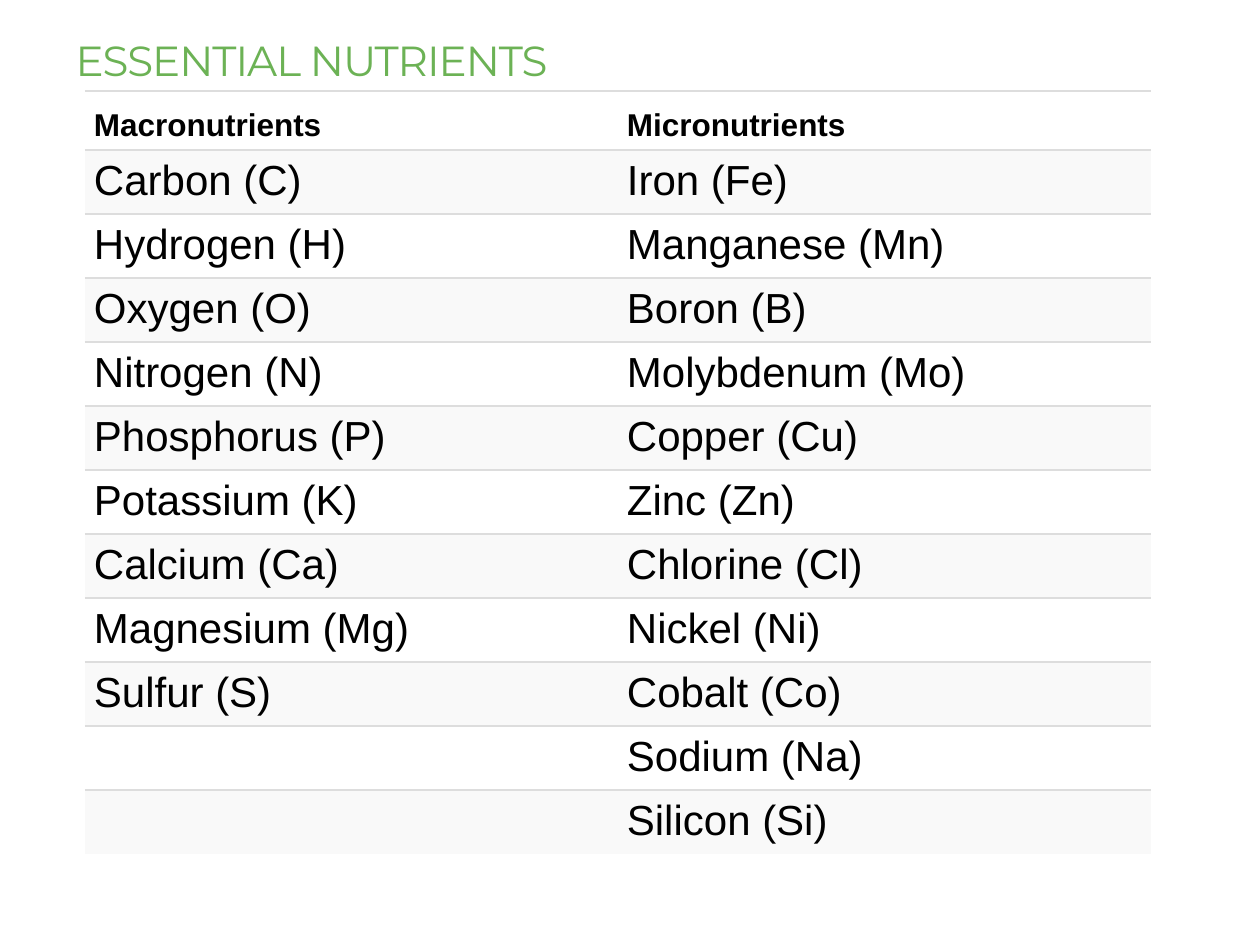
from typing import NamedTuple

from lxml.etree import SubElement
from pptx import Presentation
from pptx.dml.color import RGBColor
from pptx.enum.text import MSO_ANCHOR, MSO_AUTO_SIZE, PP_ALIGN
from pptx.oxml.ns import qn
from pptx.util import Emu, Pt

PX = 914400 // 126
HEADER_H, ROW_H = 59, 64
STRIPE, RULE = "F9F9F9", "DDDDDD"


class Style(NamedTuple):
    font: str
    size: int
    color: str
    bold: bool = False


class Nutrients(NamedTuple):
    macro: str
    micro: str


TITLE = Style("Montserrat", 24, "6CB255")
HEADER = Style("Arial", 18, "000000", True)
BODY = Style("Arial", 24, "000000")

ROWS = [
    Nutrients("Macronutrients", "Micronutrients"),
    Nutrients("Carbon (C)", "Iron (Fe)"),
    Nutrients("Hydrogen (H)", "Manganese (Mn)"),
    Nutrients("Oxygen (O)", "Boron (B)"),
    Nutrients("Nitrogen (N)", "Molybdenum (Mo)"),
    Nutrients("Phosphorus (P)", "Copper (Cu)"),
    Nutrients("Potassium (K)", "Zinc (Zn)"),
    Nutrients("Calcium (Ca)", "Chlorine (Cl)"),
    Nutrients("Magnesium (Mg)", "Nickel (Ni)"),
    Nutrients("Sulfur (S)", "Cobalt (Co)"),
    Nutrients("", "Sodium (Na)"),
    Nutrients("", "Silicon (Si)"),
]


def px(n: int) -> Emu:
    """Turn pixels into EMU."""
    return Emu(n * PX)


def rgb(color: str) -> RGBColor:
    """Turn a hex string into a colour."""
    return RGBColor.from_string(color)


def set_attrs(obj, values: dict) -> None:
    """Set each named attribute on an object."""
    for name, value in values.items():
        setattr(obj, name, value)


def write(tf, text: str, style: Style):
    """Write one styled run into a text frame and return it."""
    r = tf.paragraphs[0].add_run()
    r.text = text
    set_attrs(r.font, {"name": style.font, "size": Pt(style.size), "bold": style.bold})
    r.font.color.rgb = rgb(style.color)
    return r


def set_borders(cell, ruled: str) -> None:
    """Rule the named sides of a cell and clear the others."""
    tcPr = cell._tc.get_or_add_tcPr()
    for side in "LRTB":
        ln = SubElement(tcPr, qn(f"a:ln{side}"), w=str(Pt(1)))
        if side in ruled:
            fill = SubElement(ln, qn("a:solidFill"))
            SubElement(fill, qn("a:srgbClr"), val=RULE)
        else:
            SubElement(ln, qn("a:noFill"))


def draw_title(s, text: str) -> None:
    """Place and fill the title placeholder."""
    sp = s.shapes.title
    set_attrs(sp, {"left": px(63), "top": px(0), "width": px(1111), "height": px(91)})
    tf = sp.text_frame
    set_attrs(tf, {"vertical_anchor": MSO_ANCHOR.BOTTOM, "word_wrap": True,
                   "auto_size": MSO_AUTO_SIZE.NONE})
    tf.paragraphs[0].alignment = PP_ALIGN.LEFT
    write(tf, text, TITLE)._r.get_or_add_rPr().set("spc", "-60")


def draw_table(s, rows: list[Nutrients]) -> None:
    """Draw the striped nutrient table."""
    height = HEADER_H + ROW_H * (len(rows) - 1)
    table = s.shapes.add_table(len(rows), 2, px(85), px(91), px(1066), px(height)).table
    set_attrs(table, {"first_row": True, "horz_banding": False})
    for i, row in enumerate(rows):
        table.rows[i].height = px(ROW_H if i else HEADER_H)
        for j, text in enumerate(row):
            cell = table.cell(i, j)
            set_attrs(cell, {
                "margin_left": px(9), "margin_right": px(9),
                "margin_top": px(8), "margin_bottom": px(7),
                "vertical_anchor": MSO_ANCHOR.TOP if i else MSO_ANCHOR.BOTTOM,
            })
            set_borders(cell, "TB" if i < len(rows) - 1 else "T")
            if i % 2:
                cell.fill.solid()
                cell.fill.fore_color.rgb = rgb(STRIPE)
            else:
                cell.fill.background()
            if text:
                write(cell.text_frame, text, BODY if i else HEADER)


def main() -> None:
    """Build and save the slide."""
    prs = Presentation()
    set_attrs(prs, {"slide_width": px(1260), "slide_height": px(945)})
    s = prs.slides.add_slide(prs.slide_layouts[5])
    draw_title(s, "ESSENTIAL NUTRIENTS")
    draw_table(s, ROWS)
    prs.save("out.pptx")


if __name__ == "__main__":
    main()
